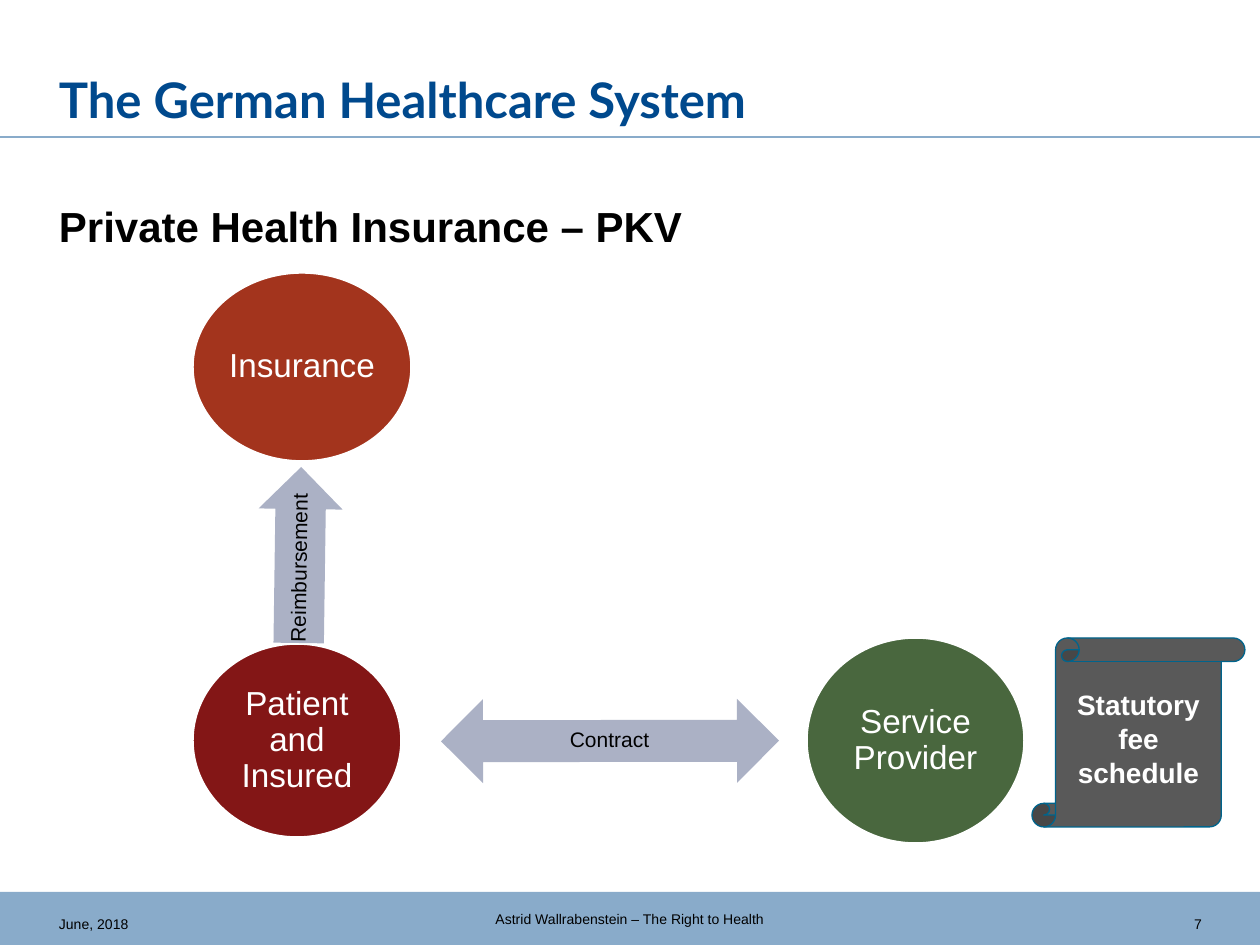
from dataclasses import dataclass
from lxml import etree
from pptx import Presentation
from pptx.dml.color import RGBColor
from pptx.enum.shapes import MSO_CONNECTOR, MSO_SHAPE
from pptx.enum.text import MSO_ANCHOR, PP_ALIGN
from pptx.oxml.ns import qn
from pptx.util import Pt

OVAL, BAR = MSO_SHAPE.OVAL, MSO_SHAPE.RECTANGLE
RIGHT_ARROW, DOUBLE_ARROW = MSO_SHAPE.RIGHT_ARROW, MSO_SHAPE.LEFT_RIGHT_ARROW
SCROLL = MSO_SHAPE.VERTICAL_SCROLL
LEFT, CENTER, RIGHT = PP_ALIGN.LEFT, PP_ALIGN.CENTER, PP_ALIGN.RIGHT
TOP, MIDDLE, BOTTOM = MSO_ANCHOR.TOP, MSO_ANCHOR.MIDDLE, MSO_ANCHOR.BOTTOM
SCALE = 914400 / 126


@dataclass(frozen=True)
class Theme:
    heading_font: str = "Lato"
    body_font: str = "Arial"
    title: str = "00498D"
    band: str = "89ABCA"
    ink: str = "000000"
    paper: str = "FFFFFF"
    arrow: str = "ABB1C5"
    scroll: str = "595959"
    scroll_line: str = "00648C"
    title_size: int = 28
    subtitle_size: int = 24
    party_size: int = 19
    scroll_size: int = 16
    arrow_size: int = 12
    footer_size: int = 8


THEME = Theme()

TITLE = "The German Healthcare System"
SUBTITLE = "Private Health Insurance – PKV"
FOOTER = "Astrid Wallrabenstein – The Right to Health"
DATE, PAGE_NUMBER = "June, 2018", "7"
PARTIES = [
    ("Insurance", (192, 272, 220, 190), "A3341D"),
    ("Service Provider", (806, 637, 219, 207), "49673E"),
    ("Patient and Insured", (192, 643, 210, 195), "831616"),
]
ARROWS = [
    ("Contract", DOUBLE_ARROW, (441, 699, 338, 84), (462, 720, 295, 42), -0.1, (0.5, 0.5)),
    ("Reimbursement", RIGHT_ARROW, (212, 513, 176, 84), (219, 543, 162, 50), 270.8, (0.6, 0.5)),
]
SCHEDULE = "Statutory fee schedule"


def px(value):
    return round(value * SCALE)


def color(code):
    return RGBColor.from_string(code)


def write(shape, text, size, ink=THEME.ink, font=THEME.body_font, bold=False,
          align=CENTER, anchor=MIDDLE, insets=(0, 0, 0, 0), spacing=1.0):
    frame = shape.text_frame
    frame.word_wrap = True
    frame.vertical_anchor = anchor
    (frame.margin_left, frame.margin_top,
     frame.margin_right, frame.margin_bottom) = map(px, insets)
    para = frame.paragraphs[0]
    para.alignment = align
    para.line_spacing = spacing
    span = para.add_run()
    span.text = text
    span.font.name = font
    span.font.size = Pt(size)
    span.font.bold = bold
    span.font.color.rgb = color(ink)


def add_text(page, text, place, size, angle=0, **style):
    box = page.shapes.add_textbox(*map(px, place))
    box.rotation = angle
    write(box, text, size, **style)


def add_figure(page, kind, place, fill, line=None, width=1):
    shape = page.shapes.add_shape(kind, *map(px, place))
    shape.shadow.inherit = False
    shape.fill.solid()
    shape.fill.fore_color.rgb = color(fill)
    if line:
        shape.line.color.rgb = color(line)
        shape.line.width = Pt(width)
    else:
        shape.line.fill.background()
    return shape


def add_rule(page, y, width):
    rule = page.shapes.add_connector(MSO_CONNECTOR.STRAIGHT, 0, px(y), px(width), px(y))
    rule.line.color.rgb = color(THEME.band)
    rule.line.width = Pt(1)
    etree.SubElement(rule._element.spPr, qn("a:effectLst"))


def main():
    deck = Presentation()
    deck.slide_width, deck.slide_height = px(1260), px(945)
    page = deck.slides.add_slide(deck.slide_layouts[6])

    band = add_figure(page, BAR, (0, 892, 1260, 53), THEME.band)
    write(band, FOOTER, THEME.footer_size)
    add_text(page, PAGE_NUMBER, (1139, 910, 63, 32), THEME.footer_size,
             align=RIGHT, anchor=TOP, insets=(0, 6, 0, 0))
    add_text(page, DATE, (59, 910, 263, 32), THEME.footer_size,
             align=LEFT, anchor=TOP, insets=(0, 6, 0, 6))
    add_rule(page, 137, 1260)
    add_text(page, TITLE, (59, 20, 1012, 114), THEME.title_size, ink=THEME.title,
             font=THEME.heading_font, bold=True, align=LEFT, anchor=BOTTOM,
             insets=(0, 6, 0, 6))
    add_text(page, SUBTITLE, (59, 200, 1128, 56), THEME.subtitle_size,
             bold=True, align=LEFT, anchor=TOP)

    for label, place, fill in PARTIES:
        party = add_figure(page, OVAL, place, fill, THEME.paper, 2)
        write(party, label, THEME.party_size, ink=THEME.paper,
              insets=(4, 4, 4, 4), spacing=0.9)

    for label, kind, place, label_place, angle, ratios in ARROWS:
        arrow = add_figure(page, kind, place, THEME.arrow)
        arrow.rotation = angle
        for index, ratio in enumerate(ratios):
            arrow.adjustments[index] = ratio
        add_text(page, label, label_place, THEME.arrow_size, angle=angle, spacing=0.9)

    schedule = add_figure(page, SCROLL, (1032, 638, 213, 189),
                          THEME.scroll, THEME.scroll_line, 0.75)
    write(schedule, SCHEDULE, THEME.scroll_size, ink=THEME.paper, bold=True,
          insets=(13, 6, 13, 6))
    deck.save("out.pptx")


if __name__ == "__main__":
    main()
